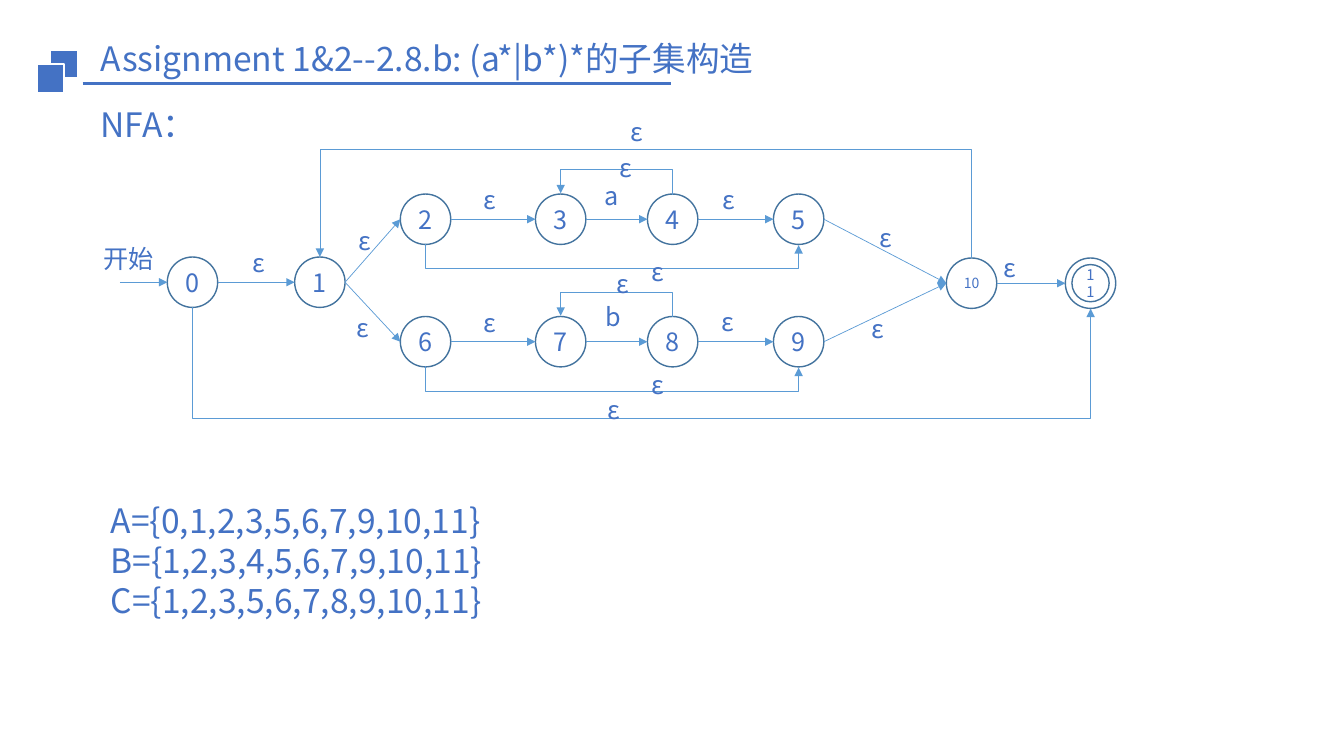
from dataclasses import dataclass

from lxml.etree import SubElement
from pptx import Presentation
from pptx.dml.color import RGBColor
from pptx.enum.shapes import MSO_CONNECTOR, MSO_SHAPE
from pptx.enum.text import MSO_ANCHOR, PP_ALIGN
from pptx.oxml.ns import qn
from pptx.util import Pt


@dataclass(frozen=True)
class Theme:
    font: str = "Noto Sans CJK SC"
    accent: RGBColor = RGBColor(0x44, 0x72, 0xC4)
    outline: RGBColor = RGBColor(0x43, 0x73, 0x9E)
    arrow: RGBColor = RGBColor(0x5B, 0x9B, 0xD5)
    white: RGBColor = RGBColor(0xFF, 0xFF, 0xFF)
    heading: float = 24
    label: float = 18
    ten: float = 10
    final: float = 10.5


THEME = Theme()
RADIUS = 18
MIDDLE_ROW = 201.6
COLUMNS = (304, 400.5, 480.5, 570.5)
ROWS = (156.6, 244.1)

# Centre of every state, by number
STATES = {0: (137.5, MIDDLE_ROW), 1: (228.5, MIDDLE_ROW),
          10: (694, MIDDLE_ROW + 0.7), 11: (779, MIDDLE_ROW + 0.7)}
for row, row_y in enumerate(ROWS):
    for column, column_x in enumerate(COLUMNS):
        STATES[2 + 4 * row + column] = (column_x, row_y)

# From, to, symbol, label centre, label top, depth of the loop (up is negative)
TRANSITIONS = [
    (0, 1, "ε", 184, 172.8, 0),
    (1, 2, "ε", 260.3, 157.7, 0),
    (1, 6, "ε", 258.8, 219.6, 0),
    (2, 3, "ε", 349.6, 128.2, 0),
    (3, 4, "a", 436, 125.3, 0),
    (4, 5, "ε", 520.2, 128.2, 0),
    (6, 7, "ε", 349.6, 216, 0),
    (7, 8, "b", 436.7, 211.7, 0),
    (8, 9, "ε", 519.5, 215.3, 0),
    (5, 10, "ε", 632.5, 155.5, 0),
    (9, 10, "ε", 626.8, 220.3, 0),
    (10, 11, "ε", 721, 176.4, 0),
    (4, 3, "ε", 446.8, 105.1, -18),
    (8, 7, "ε", 444.6, 187.9, -18),
    (2, 5, "ε", 469, 179.3, 18),
    (6, 9, "ε", 469, 260.6, 18),
    (10, 1, "ε", 454, 79.2, -78),
    (0, 11, "ε", 438, 278, 80),
]
CLOSURES = ["A={0,1,2,3,5,6,7,9,10,11}",
            "B={1,2,3,4,5,6,7,9,10,11}",
            "C={1,2,3,5,6,7,8,9,10,11}"]


def write(frame, lines, size, align=PP_ALIGN.LEFT, spacing=None):
    frame.text = "\n".join(lines)
    for para in frame.paragraphs:
        para.alignment = align
        para.space_before = Pt(0)
        if spacing:
            para.line_spacing = spacing
        for span in para.runs:
            span.font.size = Pt(size)
            span.font.name = THEME.font
            span.font.color.rgb = THEME.accent
            east_asian = SubElement(span.font._element, qn("a:ea"))
            east_asian.set("typeface", THEME.font)


def place(shape, left, top, width, height):
    shape.left, shape.top = Pt(left), Pt(top)
    shape.width, shape.height = Pt(width), Pt(height)


def add_label(page, text, center, top, size=THEME.label, width=22):
    box = page.shapes.add_textbox(Pt(center - width / 2), Pt(top), Pt(width), Pt(28.8))
    box.text_frame.word_wrap = False
    write(box.text_frame, [text], size, PP_ALIGN.CENTER)


def add_preset(page, kind, left, top, width, height, fill, line, weight):
    shape = page.shapes.add_shape(kind, Pt(left), Pt(top), Pt(width), Pt(height))
    shape.shadow.inherit = False
    if fill is None:
        shape.fill.background()
    else:
        shape.fill.solid()
        shape.fill.fore_color.rgb = fill
    shape.line.color.rgb = line
    shape.line.width = Pt(weight)
    return shape


def add_circle(page, center, radius, fill):
    x, y = center
    return add_preset(page, MSO_SHAPE.OVAL, x - radius, y - radius,
                      2 * radius, 2 * radius, fill, THEME.outline, 1)


def add_state(page, number):
    circle = add_circle(page, STATES[number], RADIUS, THEME.white)
    size = {10: THEME.ten, 11: THEME.final}.get(number, THEME.label)
    frame = circle.text_frame
    frame.word_wrap = number == 11
    frame.vertical_anchor = MSO_ANCHOR.MIDDLE
    write(frame, [str(number)], size, PP_ALIGN.CENTER)


def add_line(page, start, end, color, weight, kind=MSO_CONNECTOR.STRAIGHT, arrow=True):
    line = page.shapes.add_connector(kind, *map(Pt, start + end))
    line.line.color.rgb = color
    line.line.width = Pt(weight)
    if arrow:
        SubElement(line.line._ln, qn("a:tailEnd")).set("type", "triangle")
    SubElement(line._element.spPr, qn("a:effectLst"))
    return line


def add_loop(page, source, target, depth):
    """U-shaped elbow: a one-point-wide connector turned a quarter."""
    (start_x, start_y), (end_x, end_y) = STATES[source], STATES[target]
    side = RADIUS if depth > 0 else -RADIUS
    x, y = (start_x + end_x) / 2, (start_y + end_y) / 2 + side
    half = abs(end_x - start_x) / 2
    loop = add_line(page, (x - 0.5, y - half), (x + 0.5, y + half),
                    THEME.arrow, 0.5, MSO_CONNECTOR.ELBOW)
    properties = loop._element.spPr
    turn = properties.find(qn("a:xfrm"))
    turn.set("rot", str((90 if depth > 0 else 270) * 60000))
    turn.set("flipV", "1")
    geometry = properties.find(qn("a:prstGeom"))
    guide = SubElement(geometry.find(qn("a:avLst")), qn("a:gd"))
    guide.set("name", "adj1")
    guide.set("fmla", f"val {abs(depth) * 100000}")


def add_transition(page, source, target, depth):
    if depth:
        add_loop(page, source, target, depth)
        return
    (start_x, start_y), (end_x, end_y) = STATES[source], STATES[target]
    add_line(page, (start_x + RADIUS, start_y), (end_x - RADIUS, end_y),
             THEME.arrow, 0.5)


def add_heading(page):
    add_line(page, (59, 59.8), (479, 59.8), THEME.accent, 2.25, arrow=False)
    for left, top in ((36, 35.5), (26.5, 46)):
        add_preset(page, MSO_SHAPE.RECTANGLE, left, top, 19.5, 20.5,
                   THEME.accent, THEME.white, 1.5)
    title = page.shapes.title
    place(title, 64.8, 25.2, 603.4, 36)
    title.text_frame.vertical_anchor = MSO_ANCHOR.MIDDLE
    write(title.text_frame, ["Assignment 1&2--2.8.b: (a*|b*)*的子集构造"],
          THEME.heading, spacing=0.9)


def add_closures(page):
    body = page.placeholders[1]
    place(body, 72, 353.5, 860, 172)
    write(body.text_frame, CLOSURES, THEME.heading, spacing=Pt(28.6))
    for para in body.text_frame.paragraphs:
        properties = para._p.get_or_add_pPr()
        properties.set("marL", "0")
        properties.set("indent", "0")
        SubElement(properties, qn("a:buNone"))


def main():
    deck = Presentation()
    deck.slide_width, deck.slide_height = Pt(960), Pt(540)
    page = deck.slides.add_slide(deck.slide_layouts[1])

    # Title and section name
    add_heading(page)
    section = page.shapes.add_textbox(Pt(64.8), Pt(74), Pt(239), Pt(44.6))
    section.text_frame.word_wrap = True
    write(section.text_frame, ["NFA："], THEME.heading, spacing=0.9)

    # Automaton
    for number in STATES:
        add_state(page, number)
    add_circle(page, STATES[11], 13.3, None)
    add_line(page, (85.7, MIDDLE_ROW), (STATES[0][0] - RADIUS, MIDDLE_ROW),
             THEME.arrow, 0.5)
    add_label(page, "开始", 91.8, 170, width=51)
    for source, target, symbol, center, top, depth in TRANSITIONS:
        add_transition(page, source, target, depth)
        add_label(page, symbol, center, top)

    # Subsets
    add_closures(page)
    deck.save("out.pptx")


if __name__ == "__main__":
    main()
